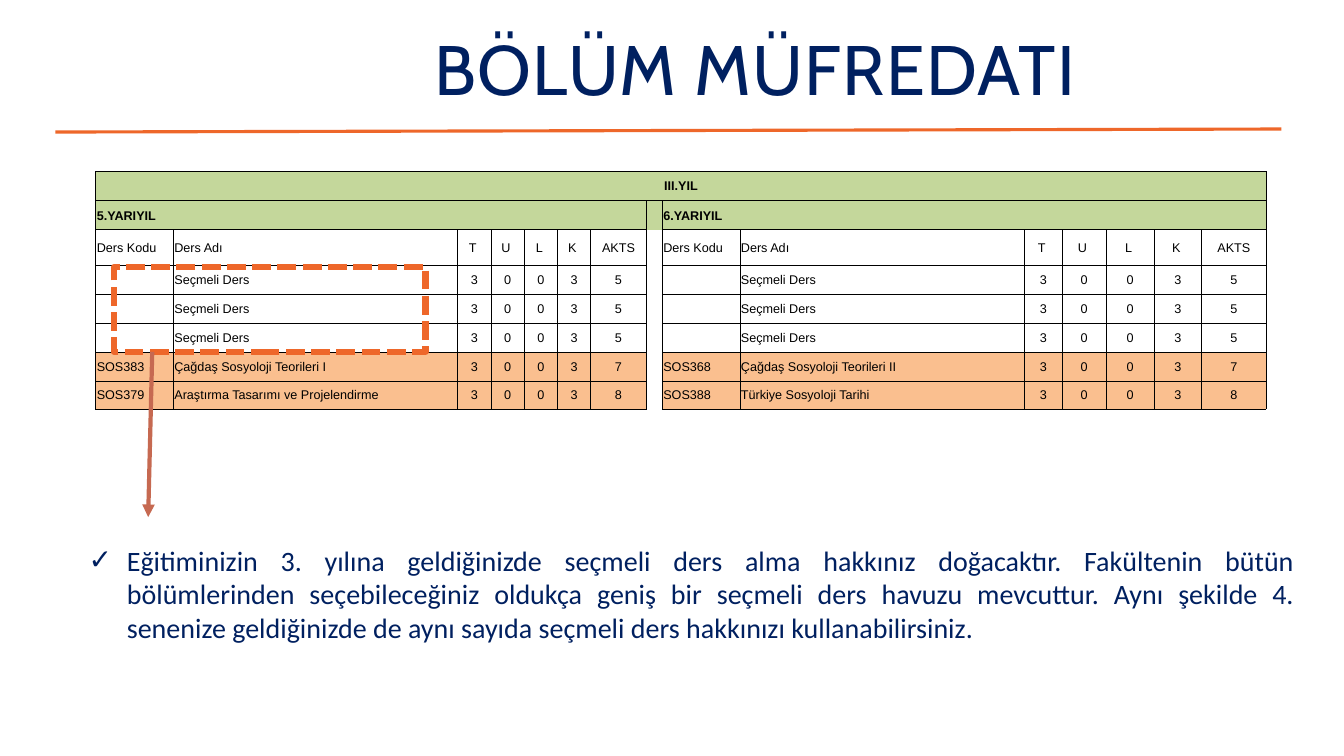
from lxml import etree
from pptx import Presentation
from pptx.dml.color import RGBColor
from pptx.enum.dml import MSO_LINE
from pptx.enum.shapes import MSO_CONNECTOR, MSO_SHAPE
from pptx.enum.text import MSO_ANCHOR as Anchor, PP_ALIGN as Align
from pptx.oxml import parse_xml
from pptx.oxml.ns import nsdecls, qn
from pptx.util import Inches, Pt

NAVY = RGBColor(0x00, 0x20, 0x60)
ORANGE = RGBColor(0xEE, 0x67, 0x2A)
RUST = RGBColor(0xC6, 0x69, 0x51)
GREEN = RGBColor(0xC4, 0xD7, 0x9B)
PEACH = RGBColor(0xFA, 0xBF, 0x8F)
WHITE = RGBColor(0xFF, 0xFF, 0xFF)
BLACK = RGBColor(0x00, 0x00, 0x00)


def add_line(page, start, end, color, width):
    line = page.shapes.add_connector(
        MSO_CONNECTOR.STRAIGHT, *(Inches(v) for v in start + end))
    line.line.color.rgb = color
    line.line.width = Pt(width)
    etree.SubElement(line._element.spPr, qn("a:effectLst"))
    return line


def add_span(para, text, font, size, color):
    span = para.add_run()
    span.text = text
    span.font.name = font
    span.font.size = Pt(size)
    span.font.color.rgb = color
    return span


deck = Presentation()
deck.slide_width, deck.slide_height = Inches(13.33), Inches(7.5)
page = deck.slides.add_slide(deck.slide_layouts[5])

# Title and rule below it
title = page.shapes.title
title.left, title.top = Inches(4.21), Inches(-0.05)
title.width, title.height = Inches(8.5), Inches(1.6)
title.text_frame.vertical_anchor = Anchor.MIDDLE
para = title.text_frame.paragraphs[0]
para.alignment = Align.LEFT
para.line_spacing = 0.8
span = add_span(para, "BÖLÜM MÜFREDATI", "Cabin", 50, NAVY)
span.font._element.set("spc", "100")
add_line(page, (0.55, 1.31), (12.71, 1.28), ORANGE, 2.25)

# Curriculum: two semesters side by side with a narrow gap column
GAP = 7
HEADER = ["Ders Kodu", "Ders Adı", "T ", "U ", "L ", "K ", "AKTS"]
ELECTIVE = ["", "Seçmeli Ders", "3", "0", "0", "3", "5"]
FALL = [["SOS383", "Çağdaş Sosyoloji Teorileri I", "3", "0", "0", "3", "7"],
        ["SOS379", "Araştırma Tasarımı ve Projelendirme", "3", "0", "0", "3", "8"]]
SPRING = [["SOS368", "Çağdaş Sosyoloji Teorileri II", "3", "0", "0", "3", "7"],
          ["SOS388", "Türkiye Sosyoloji Tarihi", "3", "0", "0", "3", "8"]]
rows = [["III.YIL"] + [""] * 14,
        ["5.YARIYIL"] + [""] * 7 + ["6.YARIYIL"] + [""] * 6,
        HEADER + [""] + HEADER]
rows += [ELECTIVE + [""] + ELECTIVE] * 3
rows += [fall + [""] + spring for fall, spring in zip(FALL, SPRING)]
row_fills = [GREEN] * 2 + [WHITE] * 4 + [PEACH] * 2
widths = [0.77, 2.82, 0.33, 0.33, 0.33, 0.33, 0.55, 0.16,
          0.77, 2.82, 0.38, 0.43, 0.48, 0.47, 0.64]
heights = [0.29, 0.29, 0.35, 0.29, 0.29, 0.29, 0.28, 0.28]

table = page.shapes.add_table(
    len(rows), len(widths), Inches(0.95), Inches(1.7),
    Inches(sum(widths)), Inches(sum(heights))).table
for column, width in zip(table.columns, widths):
    column.width = Inches(width)
for row, height in zip(table.rows, heights):
    row.height = Inches(height)

for r, texts in enumerate(rows):
    for c, text in enumerate(texts):
        cell = table.cell(r, c)
        cell.vertical_anchor = Anchor.MIDDLE
        cell.margin_left = cell.margin_right = cell.margin_top = Inches(0.01)
        cell.margin_bottom = 0
        cell.fill.solid()
        cell.fill.fore_color.rgb = WHITE if c == GAP and r > 1 else row_fills[r]
        para = cell.text_frame.paragraphs[0]
        if text:
            span = add_span(para, text, "Arial", 9, BLACK)
            span.font.bold = r < 2
            centred = r == 0 or (r > 1 and c % 8 > 1)
            para.alignment = Align.CENTER if centred else Align.LEFT
        else:
            etree.SubElement(para._p, qn("a:endParaRPr"), sz="900")
        # The gap column keeps its side borders only, below the year row
        for index, side in enumerate("LRTB"):
            hidden = c == GAP and ((side == "T" and r > 1) or (side == "B" and r > 0))
            paint = ("<a:noFill/>" if hidden else
                     f'<a:solidFill><a:srgbClr val="{BLACK}"/></a:solidFill>')
            border = parse_xml(
                f'<a:ln{side} {nsdecls("a")} w="{Pt(0.5)}">{paint}</a:ln{side}>')
            cell._tc.tcPr.insert(index, border)

table.cell(0, 0).merge(table.cell(0, 14))
for first in (0, GAP + 1):
    table.cell(1, first).merge(table.cell(1, first + 6))

# Note on electives
box = page.shapes.add_textbox(Inches(0.78), Inches(5.34), Inches(12.16), Inches(1.11))
box.text_frame.word_wrap = True
para = box.text_frame.paragraphs[0]
para.alignment = Align.JUSTIFY
props = para._p.get_or_add_pPr()
props.set("marL", str(Inches(0.38)))
props.set("indent", str(Inches(-0.38)))
etree.SubElement(props, qn("a:buFont"), typeface="Arial")
etree.SubElement(props, qn("a:buChar"), char="✓")
add_span(para, "Eğitiminizin 3. yılına geldiğinizde seçmeli ders alma hakkınız doğacaktır. "
         "Fakültenin bütün bölümlerinden seçebileceğiniz oldukça geniş bir seçmeli ders "
         "havuzu mevcuttur. Aynı şekilde 4. senenize geldiğinizde de aynı sayıda seçmeli "
         "ders hakkınızı kullanabilirsiniz.", "Calibri", 20, NAVY)

# Dashed frame around the electives, with an arrow to the note
frame = page.shapes.add_shape(
    MSO_SHAPE.RECTANGLE, Inches(1.13), Inches(2.65), Inches(3.09), Inches(0.84))
frame.shadow.inherit = False
frame.fill.background()
frame.line.color.rgb = ORANGE
frame.line.width = Pt(4.5)
frame.line.dash_style = MSO_LINE.SQUARE_DOT
arrow = add_line(page, (1.51, 3.49), (1.47, 5.13), RUST, 3)
etree.SubElement(arrow.line._get_or_add_ln(), qn("a:tailEnd"), type="triangle")

deck.save("out.pptx")
